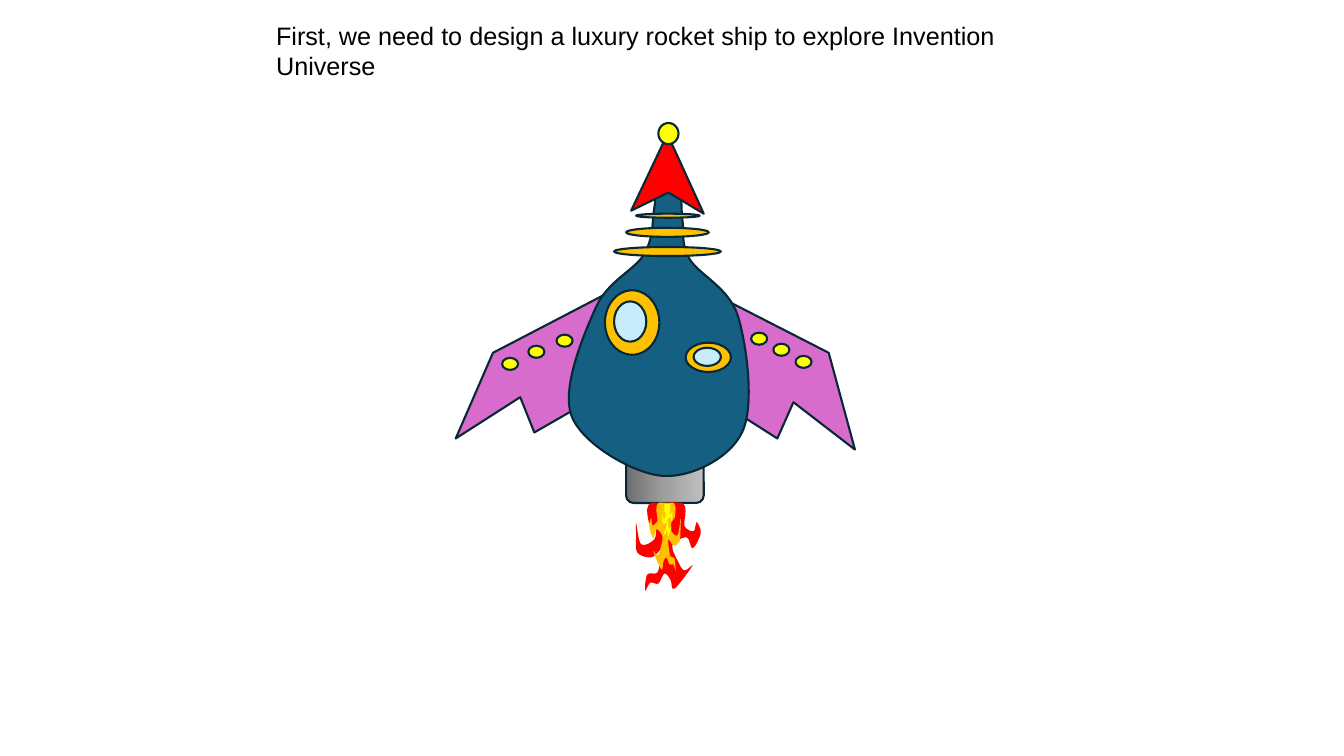
import copy
import lxml.etree
import pptx
import pptx.util
import pptx.dml.color
import pptx.enum.shapes
import pptx.enum.text
import pptx.oxml.ns

Inches, Pt = pptx.util.Inches, pptx.util.Pt
MSO_SHAPE = pptx.enum.shapes.MSO_SHAPE
rgb = pptx.dml.color.RGBColor.from_string
qn = pptx.oxml.ns.qn

NAVY, BLUE, PINK, ICE = "082836", "156082", "D86CCC", "C7EDFC"
RED, AMBER, YELLOW = "FF0000", "FFC000", "FFFF00"


def finish(sp, color, outlined=True):
    """Apply the flat fill and the outline shared by the rocket's parts."""
    sp.shadow.inherit = False
    sp.fill.solid()
    sp.fill.fore_color.rgb = rgb(color)
    if outlined:
        sp.line.color.rgb = rgb(NAVY)
        sp.line.width = Pt(1.5)
    else:
        sp.line.fill.background()


def outline(shapes, points, box=None):
    """Close a freeform through the points; a box makes it a smooth spline."""
    emu = [(Inches(x), Inches(y)) for x, y in points]
    builder = shapes.build_freeform(*emu[0])
    builder.add_line_segments(emu[1:] + emu[:1], close=True)
    sp = builder.convert_to_shape()
    if box:
        sp.left, sp.top, sp.width, sp.height = (Inches(v) for v in box)
        path = sp._element.spPr.find(".//" + qn("a:path"))
        path.set("w", str(sp.width))
        path.set("h", str(sp.height))
        start = path[0][0]
        start.set("x", str(emu[0][0] - sp.left))
        start.set("y", str(emu[0][1] - sp.top))
        n = len(emu)
        for i, segment in enumerate(path.findall(qn("a:lnTo"))):
            a, b, c, d = (emu[(i + k) % n] for k in (-1, 0, 1, 2))
            # Tangents run parallel to the chord between the neighbours
            leave = [q + (r - p) / 6 for p, q, r in zip(a, b, c)]
            arrive = [r - (u - q) / 6 for q, r, u in zip(b, c, d)]
            curve = lxml.etree.Element(qn("a:cubicBezTo"))
            for x, y in (leave, arrive, c):
                lxml.etree.SubElement(curve, qn("a:pt"),
                                      x=str(round(x - sp.left)),
                                      y=str(round(y - sp.top)))
            path.replace(segment, curve)
    return sp


prs = pptx.Presentation()
prs.slide_width, prs.slide_height = Inches(13.33), Inches(7.5)
s = prs.slides.add_slide(prs.slide_layouts[6])

# Sentence at the top
tb = s.shapes.add_textbox(Inches(2.64), Inches(0.15), Inches(8), Inches(0.4))
tf = tb.text_frame
tf.text = "First, we need to design a luxury rocket ship to explore Invention Universe"
tf.word_wrap = True
tf.auto_size = pptx.enum.text.MSO_AUTO_SIZE.SHAPE_TO_FIT_TEXT
p = tf.paragraphs[0]
p.font.name, p.font.size = "Arial", Pt(18)
p.font.color.rgb = rgb("000000")

# Engine with a three-stop metal gradient
rocket = s.shapes.add_group_shape().shapes
engine = rocket.add_shape(MSO_SHAPE.ROUNDED_RECTANGLE, Inches(6.21), Inches(4.55),
                          Inches(0.77), Inches(0.44))
finish(engine, "9F9F9F")
engine.fill.gradient()
engine.fill.gradient_angle = 0
stops = engine._element.spPr.find(".//" + qn("a:gsLst"))
stops.insert(1, copy.deepcopy(stops[0]))
metal = [(0, "6E6E6E"), (0.5, "9F9F9F"), (1, "BFBFBF")]
for stop, (position, color) in zip(engine.fill.gradient_stops, metal):
    stop.position = position
    stop.color.rgb = rgb(color)

# Wings and body
wings = [(6.54, 2.64), (4.89, 3.5), (4.52, 4.35), (5.16, 3.94), (5.3, 4.29),
         (6.52, 3.59), (7.71, 4.35), (7.87, 3.99), (8.48, 4.46), (8.22, 3.5)]
body = [(6.49, 2.06), (6.39, 2.52), (5.91, 3.05), (5.67, 4.13), (6.56, 4.72),
        (7.36, 4.29), (7.32, 3.14), (6.84, 2.57), (6.77, 2.2), (6.73, 1.89),
        (6.52, 1.88)]
finish(outline(rocket, wings), PINK)
finish(outline(rocket, body, box=(5.64, 1.85, 1.78, 2.87)), BLUE)

# Ovals as left, top, width, height, colour
portholes = [(6, 2.88, 0.54, 0.64, AMBER), (6.09, 2.99, 0.32, 0.4, ICE),
             (6.8, 3.4, 0.45, 0.29, AMBER), (6.88, 3.45, 0.27, 0.18, ICE)]
rings = [(6.31, 2.12, 0.63, 0.04, AMBER), (6.21, 2.26, 0.82, 0.09, AMBER),
         (6.09, 2.45, 1.06, 0.09, AMBER)]
tip = [(6.53, 1.22, 0.2, 0.21, YELLOW)]
lights = [(x, y, 0.16, 0.12, YELLOW) for x, y in
          [(4.98, 3.55), (5.24, 3.43), (5.52, 3.32),
           (7.89, 3.53), (7.67, 3.41), (7.45, 3.3)]]
nose = [(6.62, 1.33), (6.26, 2.09), (6.63, 1.91), (6.98, 2.12)]

# Portholes lie below the nose cone, the other ovals above it
for ovals in (portholes, rings + tip + lights):
    if ovals is not portholes:
        finish(outline(rocket, nose), RED)
    for x, y, w, h, color in ovals:
        finish(rocket.add_shape(MSO_SHAPE.OVAL, Inches(x), Inches(y),
                                Inches(w), Inches(h)), color)

# Flames as colour, box and points, from the outer to the inner
flames = [
    (RED, (6.31, 4.99, 0.64, 0.88), [
        (6.56, 4.99), (6.46, 4.99), (6.42, 5.05), (6.44, 5.19), (6.5, 5.23),
        (6.49, 5.35), (6.36, 5.4), (6.31, 5.19), (6.31, 5.3), (6.32, 5.48),
        (6.46, 5.53), (6.55, 5.46), (6.55, 5.54), (6.52, 5.68), (6.42, 5.7),
        (6.4, 5.86), (6.45, 5.78), (6.53, 5.79), (6.59, 5.69), (6.65, 5.75),
        (6.69, 5.84), (6.87, 5.61), (6.79, 5.66), (6.73, 5.58), (6.67, 5.41),
        (6.81, 5.33), (6.87, 5.44), (6.95, 5.29), (6.91, 5.18), (6.88, 5.27),
        (6.79, 5.22), (6.8, 5.07), (6.76, 4.99)]),
    (AMBER, (6.44, 4.99, 0.31, 0.67), [
        (6.63, 4.99), (6.68, 4.99), (6.7, 5.04), (6.69, 5.14), (6.66, 5.18),
        (6.66, 5.27), (6.72, 5.31), (6.75, 5.15), (6.75, 5.23), (6.74, 5.37),
        (6.68, 5.41), (6.63, 5.35), (6.63, 5.41), (6.65, 5.52), (6.69, 5.54),
        (6.7, 5.66), (6.68, 5.6), (6.64, 5.6), (6.61, 5.53), (6.58, 5.57),
        (6.56, 5.65), (6.48, 5.47), (6.52, 5.51), (6.55, 5.44), (6.57, 5.32),
        (6.51, 5.25), (6.48, 5.34), (6.44, 5.22), (6.46, 5.14), (6.47, 5.21),
        (6.52, 5.17), (6.51, 5.06), (6.53, 4.99)]),
    (YELLOW, (6.57, 5, 0.1, 0.33), [
        (6.61, 5), (6.59, 5), (6.59, 5.02), (6.59, 5.07), (6.6, 5.09),
        (6.6, 5.13), (6.58, 5.15), (6.57, 5.07), (6.57, 5.12), (6.57, 5.18),
        (6.59, 5.2), (6.61, 5.18), (6.61, 5.21), (6.6, 5.26), (6.59, 5.27),
        (6.58, 5.33), (6.59, 5.3), (6.6, 5.3), (6.61, 5.26), (6.62, 5.28),
        (6.63, 5.32), (6.66, 5.23), (6.64, 5.25), (6.63, 5.22), (6.62, 5.16),
        (6.65, 5.13), (6.66, 5.17), (6.67, 5.11), (6.66, 5.07), (6.66, 5.1),
        (6.64, 5.09), (6.65, 5.03), (6.64, 5)]),
]
fire = s.shapes.add_group_shape().shapes
for color, box, points in flames:
    finish(outline(fire, points, box), color, outlined=False)

prs.save("out.pptx")
